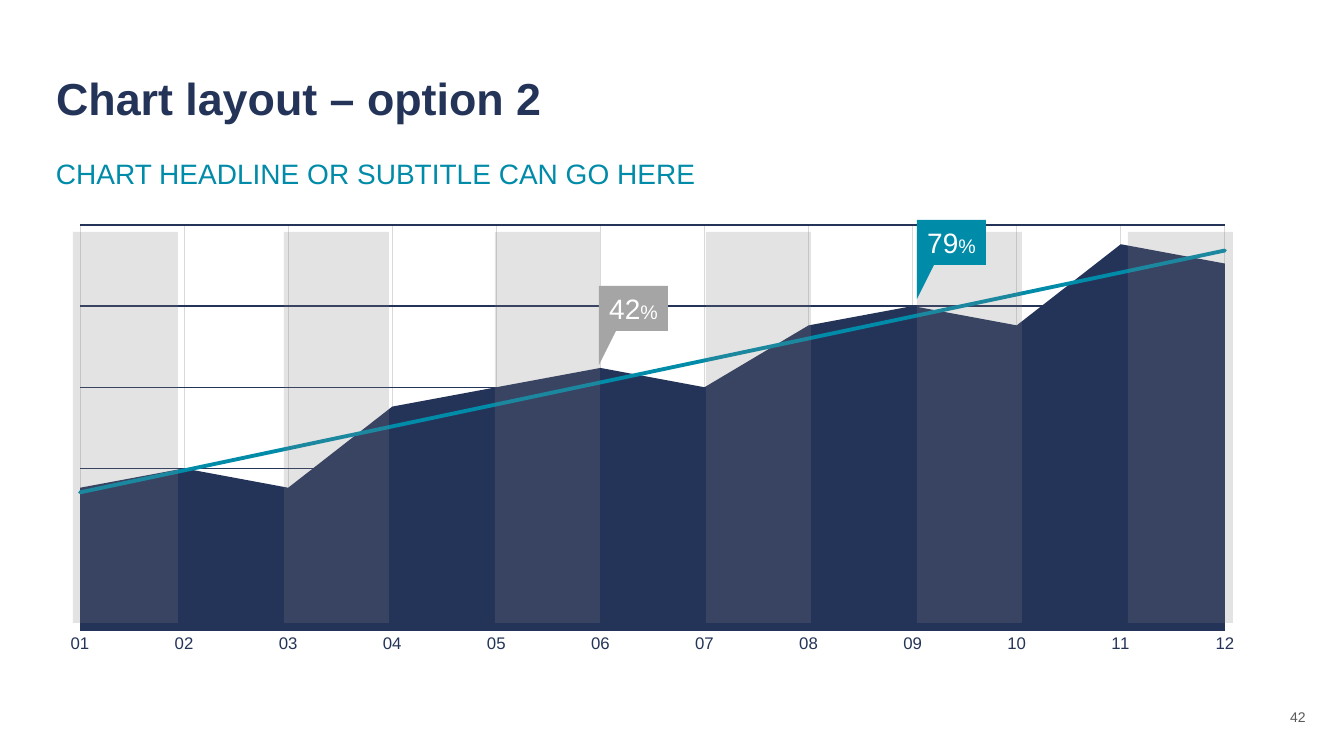
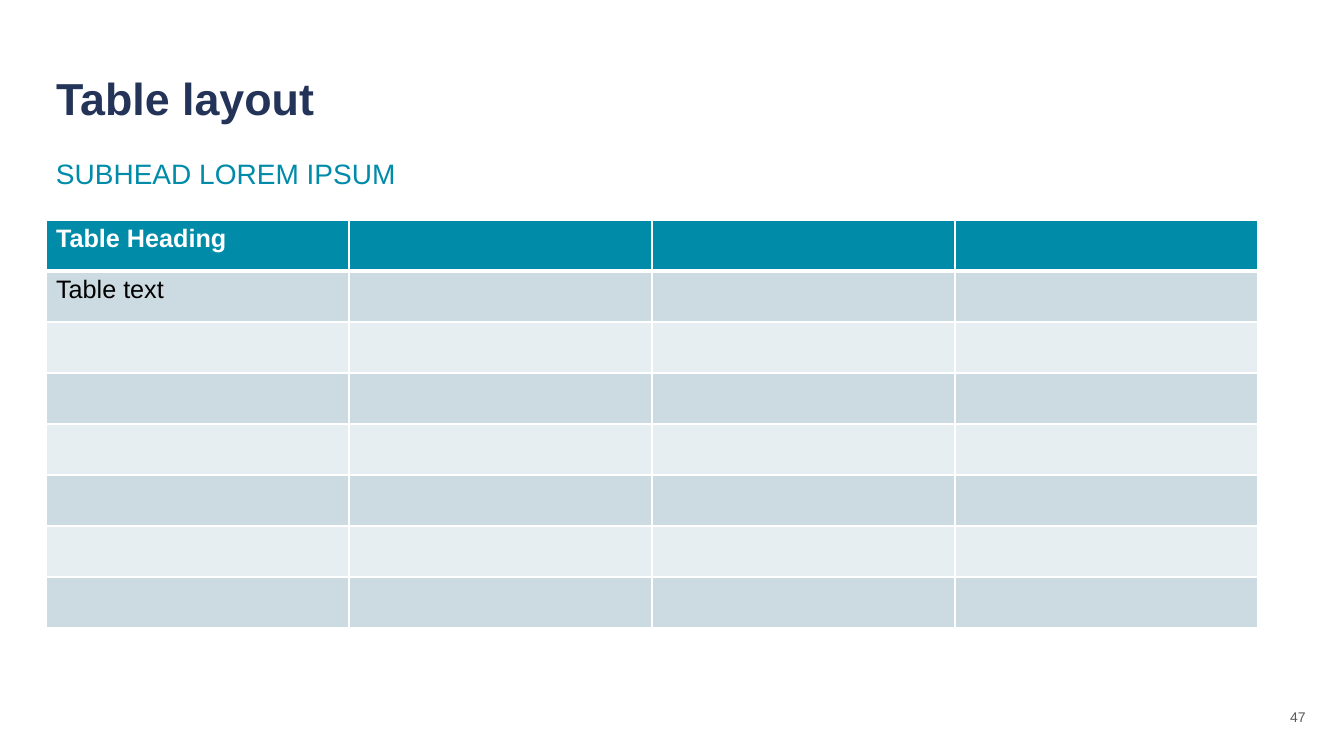
from lxml import etree
from pptx import Presentation
from pptx import util as u
from pptx.chart.data import CategoryChartData
from pptx.dml.color import RGBColor
from pptx.enum import chart as charts, shapes, text
from pptx.oxml import ns, parse_xml

NAVY = RGBColor(0x24, 0x34, 0x59)
TEAL = RGBColor(0x00, 0x8B, 0xA9)
GREY = RGBColor(0xA5, 0xA5, 0xA5)
STRIPE_GREY = RGBColor(0x80, 0x80, 0x80)
LINE_GREY = RGBColor(0xD9, 0xD9, 0xD9)
NUMBER_GREY = RGBColor(0x59, 0x59, 0x59)
ROW_DARK = RGBColor(0xCC, 0xDA, 0xE2)
ROW_LIGHT = RGBColor(0xE7, 0xEE, 0xF1)
WHITE = RGBColor(0xFF, 0xFF, 0xFF)
BLACK = RGBColor(0, 0, 0)
FONT = "Arial"
PX = 914400 / 100.8

# Content
CHART_SLIDE = ("Chart layout – option 2", "CHART HEADLINE OR SUBTITLE CAN GO HERE", "42")
TABLE_SLIDE = ("Table layout", "SUBHEAD LOREM IPSUM", "47")
VALUES = [37, 42, 37, 58, 63, 68, 63, 79, 84, 79, 100, 95]
CALLOUTS = [("79", 917, 220, TEAL), ("42", 599, 286, GREY)]
TABLE_TEXT = {(0, 0): "Table Heading", (1, 0): "Table text"}

# Geometry in px
SLIDE_SIZE = (1344, 756)
TITLE_BOX = (46, 33, 1048, 97)
SUBTITLE_BOX = (46, 152, 1048, 46)
NUMBER_BOX = (1274, 697, 48, 40)
CHART_BOX = (46, 217, 1212, 446)
PLOT_BOX = (80, 225, 1145, 406)
STRIPE_BOX = (73, 232, 105, 391)
STRIPE_COUNT, STRIPE_PITCH = 6, 211
CALLOUT_SIZE, POINTER_SIZE = (69, 45), (17, 34)
TABLE_LEFT, TABLE_TOP = 46, 220
ROWS, COLUMNS, ROW_HEIGHT, COLUMN_WIDTH = 8, 4, 51, 303


def emu(*lengths):
    return [u.Emu(round(length * PX)) for length in lengths]


def style_font(font, size, color, bold=False):
    font.name, font.size, font.bold = FONT, u.Pt(size), bold
    font.color.rgb = color


def set_text(shape, content, size, color, anchor, align, bold=False, spacing=None):
    frame = shape.text_frame
    frame.text = content
    frame.word_wrap = True
    frame.auto_size = text.MSO_AUTO_SIZE.NONE
    frame.vertical_anchor = anchor
    paragraph = frame.paragraphs[0]
    paragraph.alignment = align
    paragraph.line_spacing = spacing
    style_font(paragraph.runs[0].font, size, color, bold)


def add_base_slide(presentation, title, subtitle, number):
    """Add a slide with the shared title, subtitle and page number."""
    slide = presentation.slides.add_slide(presentation.slide_layouts[5])
    heading = slide.shapes.title
    heading.left, heading.top, heading.width, heading.height = emu(*TITLE_BOX)
    set_text(heading, title, 32, NAVY, text.MSO_ANCHOR.BOTTOM,
             text.PP_ALIGN.LEFT, bold=True, spacing=0.9)
    set_text(slide.shapes.add_textbox(*emu(*SUBTITLE_BOX)), subtitle, 20, TEAL,
             text.MSO_ANCHOR.MIDDLE, text.PP_ALIGN.LEFT, spacing=0.9)
    set_text(slide.shapes.add_textbox(*emu(*NUMBER_BOX)), number, 10, NUMBER_GREY,
             text.MSO_ANCHOR.MIDDLE, text.PP_ALIGN.CENTER)
    return slide


def add_filled(group, kind, box, color):
    shape = group.shapes.add_shape(kind, *emu(*box))
    shape.shadow.inherit = False
    shape.fill.solid()
    shape.fill.fore_color.rgb = color
    shape.line.fill.background()
    return shape


def style_line(line, color, width):
    line.color.rgb = color
    line.width = u.Pt(width)


def add_trend_line(series):
    trend = parse_xml(
        f'<c:trendline {ns.nsdecls("c", "a")}><c:spPr><a:ln w="{u.Pt(2.75)}" cap="rnd">'
        f'<a:solidFill><a:srgbClr val="{TEAL}"/></a:solidFill></a:ln></c:spPr>'
        '<c:trendlineType val="linear"/><c:dispRSqr val="0"/><c:dispEq val="0"/>'
        '</c:trendline>')
    series._element.find(ns.qn("c:cat")).addprevious(trend)


def place_plot(chart):
    """Fix the inner plot area at PLOT_BOX."""
    plot_area = chart._chartSpace.chart.plotArea
    for old in plot_area.findall(ns.qn("c:layout")):
        plot_area.remove(old)
    left, top, width, height = CHART_BOX
    x, y, w, h = PLOT_BOX
    fractions = {"x": (x - left) / width, "y": (y - top) / height,
                 "w": w / width, "h": h / height}
    layout = parse_xml(
        f'<c:layout {ns.nsdecls("c")}><c:manualLayout><c:layoutTarget val="inner"/>'
        '<c:xMode val="edge"/><c:yMode val="edge"/>'
        + "".join(f'<c:{key} val="{value:.4f}"/>' for key, value in fractions.items())
        + '</c:manualLayout></c:layout>')
    plot_area.insert(0, layout)
    for crossing in plot_area.iter(ns.qn("c:crossBetween")):
        crossing.set("val", "midCat")


def add_area_chart(slide):
    data = CategoryChartData()
    data.categories = [f"{month:02}" for month in range(1, len(VALUES) + 1)]
    data.add_series("Series 1", VALUES)
    chart = slide.shapes.add_chart(charts.XL_CHART_TYPE.AREA, *emu(*CHART_BOX), data).chart
    chart.has_legend = chart.has_title = False
    style_font(chart.font, 10, BLACK)
    chart.plots[0].vary_by_categories = False
    series = chart.plots[0].series[0]
    series.format.fill.solid()
    series.format.fill.fore_color.rgb = NAVY
    add_trend_line(series)

    months = chart.category_axis
    months.major_tick_mark = months.minor_tick_mark = charts.XL_TICK_MARK.NONE
    months.has_major_gridlines = True
    style_font(months.tick_labels.font, 12, NAVY)
    style_line(months.format.line, LINE_GREY, 0.75)
    style_line(months.major_gridlines.format.line, LINE_GREY, 0.75)

    amounts = chart.value_axis
    amounts.minimum_scale, amounts.maximum_scale, amounts.major_unit = 0, 105, 21
    amounts.has_major_gridlines = True
    style_line(amounts.major_gridlines.format.line, NAVY, 1)
    amounts.visible = False
    place_plot(chart)


def add_stripes(slide):
    group = slide.shapes.add_group_shape()
    left, *rest = STRIPE_BOX
    for index in range(STRIPE_COUNT):
        stripe = add_filled(group, shapes.MSO_SHAPE.RECTANGLE,
                            (left + index * STRIPE_PITCH, *rest), STRIPE_GREY)
        color = stripe._element.spPr.find(ns.qn("a:solidFill"))[0]
        etree.SubElement(color, ns.qn("a:alpha")).set("val", "22000")


def add_callout(slide, value, left, top, color):
    group = slide.shapes.add_group_shape()
    box = add_filled(group, shapes.MSO_SHAPE.RECTANGLE, (left, top, *CALLOUT_SIZE), color)
    set_text(box, value, 20, WHITE, text.MSO_ANCHOR.MIDDLE, text.PP_ALIGN.CENTER)
    frame = box.text_frame
    frame.margin_left = frame.margin_right = frame.margin_top = frame.margin_bottom = 0
    percent = frame.paragraphs[0].add_run()
    percent.text = "%"
    style_font(percent.font, 14, WHITE)
    pointer = add_filled(group, shapes.MSO_SHAPE.RIGHT_TRIANGLE,
                         (left, top + CALLOUT_SIZE[1], *POINTER_SIZE), color)
    pointer._element.spPr.xfrm.set("flipV", "1")


def set_borders(cell, bottom_width, top_width):
    widths = {"lnL": 1, "lnR": 1, "lnT": top_width, "lnB": bottom_width}
    for index, (side, width) in enumerate(widths.items()):
        border = parse_xml(
            f'<a:{side} {ns.nsdecls("a")} w="{u.Pt(width)}"><a:solidFill>'
            f'<a:srgbClr val="{WHITE}"/></a:solidFill></a:{side}>')
        cell._tc.get_or_add_tcPr().insert(index, border)


def add_banded_table(slide):
    box = (TABLE_LEFT, TABLE_TOP, COLUMNS * COLUMN_WIDTH, ROWS * ROW_HEIGHT)
    table = slide.shapes.add_table(ROWS, COLUMNS, *emu(*box)).table
    for row in range(ROWS):
        table.rows[row].height = emu(ROW_HEIGHT)[0]
        is_heading = row == 0
        fill = TEAL if is_heading else ROW_DARK if row % 2 else ROW_LIGHT
        for column in range(COLUMNS):
            cell = table.cell(row, column)
            cell.fill.solid()
            cell.fill.fore_color.rgb = fill
            set_borders(cell, 3 if is_heading else 1, 3 if row == 1 else 1)
            if (row, column) in TABLE_TEXT:
                cell.text = TABLE_TEXT[row, column]
                style_font(cell.text_frame.paragraphs[0].runs[0].font, 18,
                           WHITE if is_heading else BLACK, is_heading)


def main():
    presentation = Presentation()
    presentation.slide_width, presentation.slide_height = emu(*SLIDE_SIZE)
    chart_slide = add_base_slide(presentation, *CHART_SLIDE)
    add_area_chart(chart_slide)
    add_stripes(chart_slide)
    for callout in CALLOUTS:
        add_callout(chart_slide, *callout)
    add_banded_table(add_base_slide(presentation, *TABLE_SLIDE))
    presentation.save("out.pptx")


if __name__ == "__main__":
    main()
